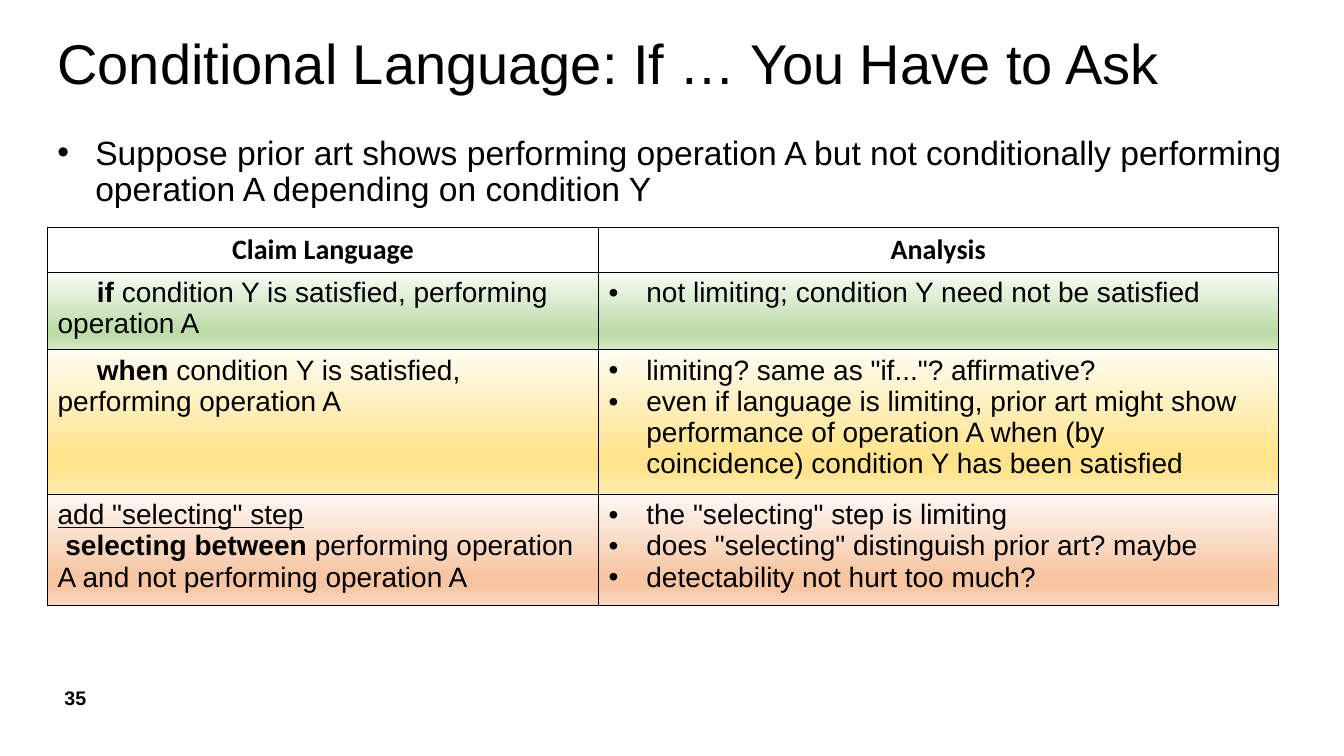
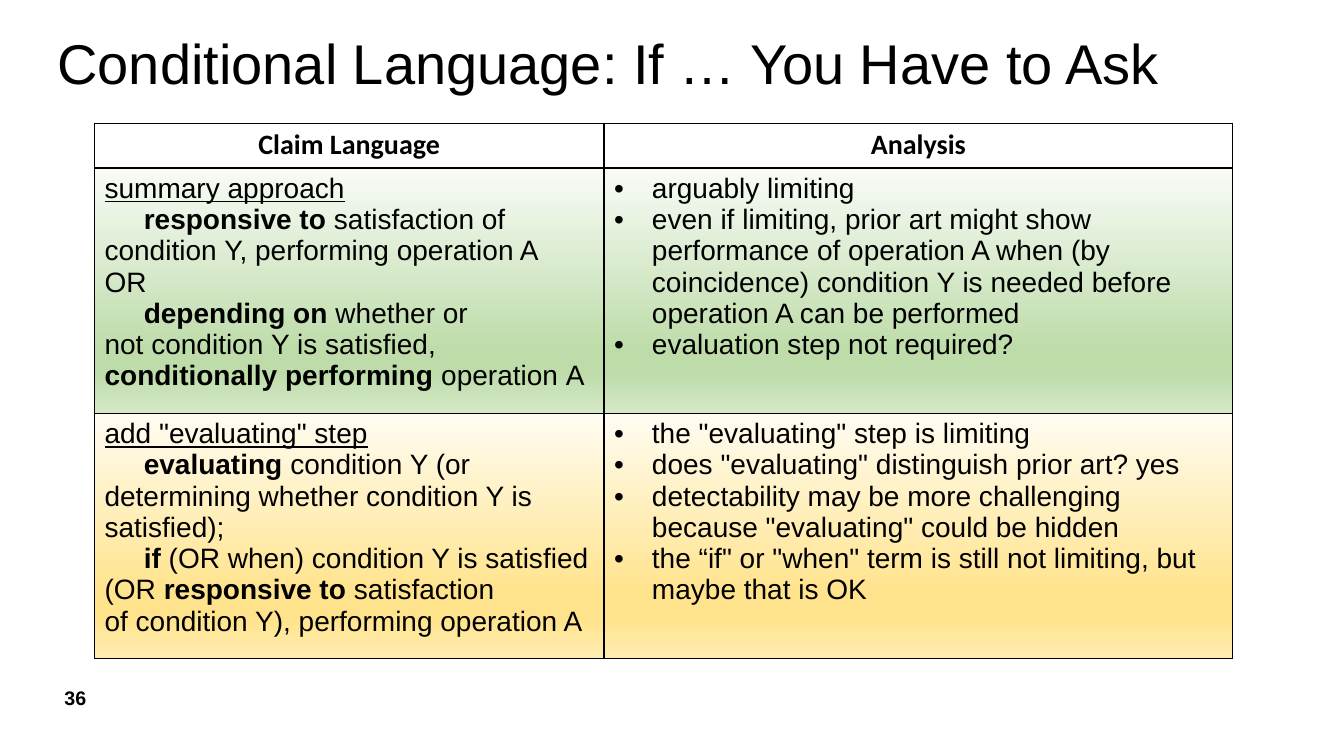
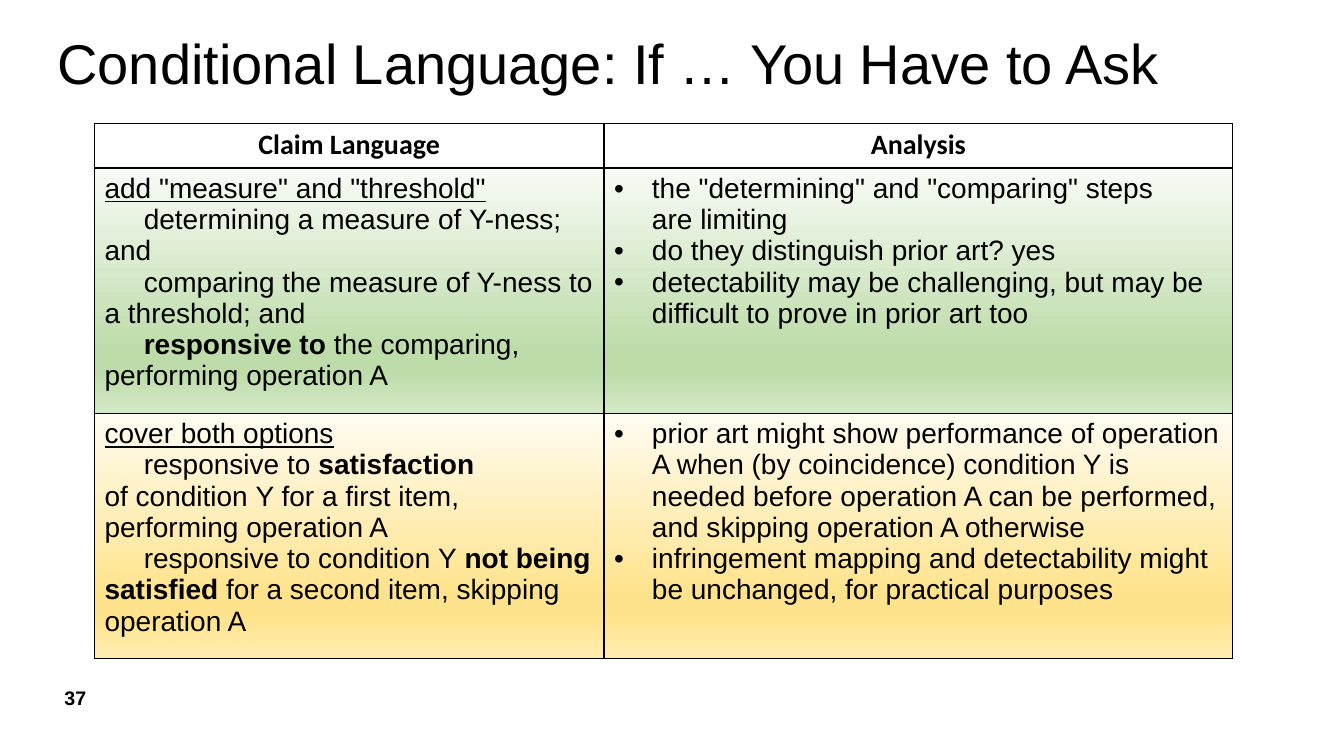
from dataclasses import dataclass

from lxml.etree import SubElement
from pptx import Presentation
from pptx.dml.color import RGBColor
from pptx.enum.text import MSO_ANCHOR as Anchor, PP_ALIGN as Align
from pptx.oxml.ns import qn
from pptx.util import Pt


@dataclass(frozen=True)
class Theme:
    ink: str = "000000"
    body_font: str = "Arial"
    header_font: str = "Calibri"
    title_size: int = 40
    lead_size: int = 24
    table_size: int = 20
    number_size: int = 14
    bullet_indent: float = 27
    step_indent: float = 28
    border: float = 1
    green: tuple = ("F8FBF6", "BEDCAA", "BEDCAA", "D4E8C6")
    yellow: tuple = ("FFFCF2", "FFE38C", "FFE38C", "FFECB2")
    orange: tuple = ("FEF8F5", "F7C5A2", "F7C5A2", "FAD8C1")
    gradient_stops: tuple = (0, 74, 83, 100)


THEME = Theme()
ROW_FILLS = (THEME.green, THEME.yellow, THEME.orange)
TITLE = "Conditional Language: If … You Have to Ask"
HEADERS = ("Claim Language", "Analysis")
FIRST_NUMBER = 35
WIDE_TABLE = {"left": 34, "top": 162.5, "columns": (393.5, 485.5), "heights": (32, 52, 96.5, 79)}
TALL_TABLE = {"left": 67.5, "top": 88, "columns": (364, 449), "heights": (32, 164, 163)}

# Markup: *bold*, ~ for a non-breaking space.
SLIDES = [
    {
        "lead": "Suppose prior art shows performing operation A but not conditionally performing "
                "operation A depending on condition Y",
        "table": WIDE_TABLE,
        "rows": [
            ([("step", "*if* condition Y is satisfied, performing operation A")],
             ["not limiting; condition Y need not be satisfied"]),
            ([("step", "*when* condition Y is satisfied, performing operation A")],
             ['limiting? same as "if..."? affirmative?',
              "even if language is limiting, prior art might show performance of operation A "
              "when (by coincidence) condition Y has been satisfied"]),
            ([("heading", 'add "selecting" step'),
              ("nudge", "*selecting between* performing operation A and not performing operation A")],
             ['the "selecting" step is limiting',
              'does "selecting" distinguish prior art? maybe',
              "detectability not hurt too much?"]),
        ],
    },
    {
        "table": TALL_TABLE,
        "rows": [
            ([("heading", "summary approach"),
              ("step", "*responsive to* satisfaction of condition~Y, performing operation A"),
              ("plain", "OR"),
              ("step", "*depending on* whether or not~condition~Y is~satisfied, "
                       "*conditionally performing* operation~A")],
             ["arguably limiting",
              "even if limiting, prior art might show performance of operation A when "
              "(by coincidence) condition Y is needed before operation A can be performed",
              "evaluation step not required?"]),
            ([("heading", 'add "evaluating" step'),
              ("step", "*evaluating* condition Y (or determining whether condition Y is satisfied);"),
              ("step", "*if* (OR when) condition Y is satisfied (OR~*responsive to* satisfaction "
                       "of~condition Y), performing operation A")],
             ['the "evaluating" step is limiting',
              'does "evaluating" distinguish prior art? yes',
              'detectability may be more challenging because "evaluating" could be hidden',
              'the “if" or "when" term is still not limiting, but maybe that is OK']),
        ],
    },
    {
        "table": TALL_TABLE,
        "rows": [
            ([("heading", 'add "measure" and "threshold"'),
              ("step", "determining a measure of Y-ness; and"),
              ("step", "comparing the measure of Y-ness to a threshold; and"),
              ("step", "*responsive to* the comparing, performing operation A")],
             ['the "determining" and "comparing" steps are~limiting',
              "do they distinguish prior art? yes",
              "detectability may be challenging, but may be difficult to prove in prior art too"]),
            ([("heading", "cover both options"),
              ("step", "responsive to *satisfaction* of~condition~Y for a first item, "
                       "performing operation A"),
              ("step", "responsive to condition~Y *not being satisfied* for a second item, "
                       "skipping operation A")],
             ["prior art might show performance of operation A when (by coincidence) condition Y "
              "is needed before operation A can be performed, and skipping operation A otherwise",
              "infringement mapping and detectability might be unchanged, for practical purposes"]),
        ],
    },
]


def style(para, size, name=THEME.body_font, bold=False, underline=False):
    font = para.font
    font.size, font.name, font.bold, font.underline = Pt(size), name, bold, underline
    font.color.rgb = RGBColor.from_string(THEME.ink)


def indent(para, first, left=0):
    props = para._p.get_or_add_pPr()
    props.set("marL", str(Pt(left)))
    props.set("indent", str(Pt(first)))
    return props


def add_bullet(para):
    props = indent(para, -THEME.bullet_indent, THEME.bullet_indent)
    SubElement(props, qn("a:buFont"), typeface=THEME.body_font)
    SubElement(props, qn("a:buChar"), char="•")


def add_spans(para, text):
    for index, part in enumerate(text.replace("~", chr(160)).split("*")):
        if part:
            span = para.add_run()
            span.text = part
            if index % 2:
                span.font.bold = True


def add_text(page, left, top, width, height, text, size, bold=False, bullet=False, spacing=None):
    box = page.shapes.add_textbox(Pt(left), Pt(top), Pt(width), Pt(height))
    frame = box.text_frame
    frame.word_wrap = True
    frame.vertical_anchor = Anchor.MIDDLE
    para = frame.paragraphs[0]
    para.line_spacing = spacing
    if bullet:
        add_bullet(para)
    style(para, size, bold=bold)
    add_spans(para, text)


def fill_cell(cell, items):
    frame = cell.text_frame
    for index, (kind, text) in enumerate(items):
        para = frame.add_paragraph() if index else frame.paragraphs[0]
        if kind == "bullet":
            add_bullet(para)
        elif kind == "step":
            indent(para, THEME.step_indent)
        elif kind == "nudge":
            indent(para, 5.5)
        elif kind == "header":
            para.alignment = Align.CENTER
        header = kind == "header"
        style(para, THEME.table_size, THEME.header_font if header else THEME.body_font,
              bold=header, underline=kind == "heading")
        add_spans(para, text)


def paint_cell(cell, colors=None):
    props = cell._tc.get_or_add_tcPr()
    for side in ("L", "R", "T", "B"):
        line = SubElement(props, qn(f"a:ln{side}"), w=str(Pt(THEME.border)))
        SubElement(SubElement(line, qn("a:solidFill")), qn("a:srgbClr"), val=THEME.ink)
    if not colors:
        cell.fill.background()
        return
    gradient = SubElement(props, qn("a:gradFill"), rotWithShape="1")
    stops = SubElement(gradient, qn("a:gsLst"))
    for place, color in zip(THEME.gradient_stops, colors):
        stop = SubElement(stops, qn("a:gs"), pos=str(place * 1000))
        SubElement(stop, qn("a:srgbClr"), val=color)
    SubElement(gradient, qn("a:lin"), ang="5400000", scaled="0")


def add_claim_table(page, left, top, columns, heights, rows):
    frame = page.shapes.add_table(len(rows) + 1, len(columns), Pt(left), Pt(top),
                                  Pt(sum(columns)), Pt(sum(heights)))
    table = frame.table
    table.first_row = table.horz_banding = False
    for column, width in zip(table.columns, columns):
        column.width = Pt(width)
    for row, height in zip(table.rows, heights):
        row.height = Pt(height)
    for index, header in enumerate(HEADERS):
        fill_cell(table.cell(0, index), [("header", header)])
        paint_cell(table.cell(0, index))
    for number, ((claim, analysis), colors) in enumerate(zip(rows, ROW_FILLS), 1):
        bullets = [("bullet", text) for text in analysis]
        for index, items in enumerate((claim, bullets)):
            fill_cell(table.cell(number, index), items)
            paint_cell(table.cell(number, index), colors)


def main():
    deck = Presentation()
    deck.slide_width, deck.slide_height = Pt(960), Pt(540)
    for number, content in enumerate(SLIDES, FIRST_NUMBER):
        page = deck.slides.add_slide(deck.slide_layouts[6])
        add_text(page, 39, 484, 91.5, 29, str(number), THEME.number_size, bold=True)
        add_text(page, 34, 9.5, 891.5, 76, TITLE, THEME.title_size, spacing=0.9)
        if "lead" in content:
            add_text(page, 34, 85.5, 891.5, 75.5, content["lead"], THEME.lead_size,
                     bullet=True, spacing=0.9)
        add_claim_table(page, rows=content["rows"], **content["table"])
    deck.save("out.pptx")


if __name__ == "__main__":
    main()
